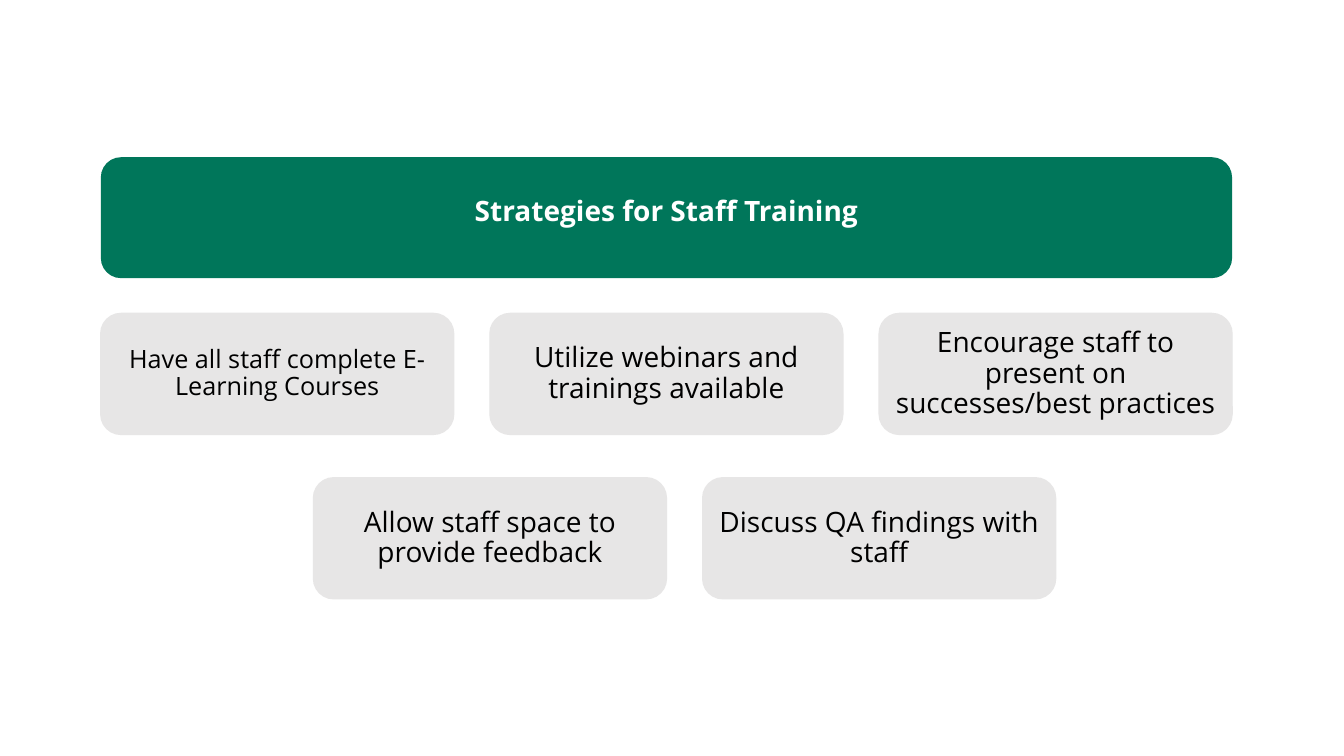
from dataclasses import dataclass

from pptx import Presentation
from pptx.dml.color import RGBColor
from pptx.enum.shapes import MSO_SHAPE
from pptx.enum.text import MSO_ANCHOR, MSO_AUTO_SIZE, PP_ALIGN
from pptx.util import Inches, Pt

ROUNDED = MSO_SHAPE.ROUNDED_RECTANGLE
MIDDLE = MSO_ANCHOR.MIDDLE
CENTER = PP_ALIGN.CENTER
GROW = MSO_AUTO_SIZE.SHAPE_TO_FIT_TEXT


@dataclass(frozen=True)
class Theme:
    font: str = "Open Sans"
    green: RGBColor = RGBColor(0x00, 0x76, 0x5A)
    gray: RGBColor = RGBColor(0xE7, 0xE6, 0xE6)
    black: RGBColor = RGBColor(0, 0, 0)
    white: RGBColor = RGBColor(0xFF, 0xFF, 0xFF)
    text_size: int = 20
    small_size: int = 18
    line_spacing: float = 0.9


class SlideBuilder:
    def __init__(self, slide, theme):
        self.slide = slide
        self.theme = theme

    def panel(self, left, top, width, height, color):
        panel = self.slide.shapes.add_shape(
            ROUNDED, Inches(left), Inches(top), Inches(width), Inches(height))
        panel.shadow.inherit = False
        panel.fill.solid()
        panel.fill.fore_color.rgb = color
        panel.line.fill.background()
        return panel

    def set_wording(self, frame, wording, size, color, bold=False):
        frame.word_wrap = True
        frame.text = wording
        paragraph = frame.paragraphs[0]
        paragraph.alignment = CENTER
        paragraph.line_spacing = self.theme.line_spacing
        font = paragraph.runs[0].font
        font.name = self.theme.font
        font.size = Pt(size)
        font.bold = bold
        font.color.rgb = color

    def card(self, left, top, width, height, wording, size):
        card = self.panel(left, top, width, height, self.theme.gray)
        card.line.color.rgb = self.theme.gray
        card.line.width = Pt(1)
        card.text_frame.vertical_anchor = MIDDLE
        self.set_wording(card.text_frame, wording, size, self.theme.black)

    def heading(self, left, top, width, height, wording):
        heading = self.slide.shapes.add_textbox(
            Inches(left), Inches(top), Inches(width), Inches(height))
        self.set_wording(heading.text_frame, wording, self.theme.text_size,
                         self.theme.white, bold=True)
        heading.text_frame.auto_size = GROW


def main():
    theme = Theme()
    deck = Presentation()
    deck.slide_width = Inches(13.33)
    deck.slide_height = Inches(7.5)
    builder = SlideBuilder(deck.slides.add_slide(deck.slide_layouts[6]), theme)

    card_width, card_height, card_step = 3.5, 1.2, 3.86
    strategy_rows = [
        (1, 3.11, [
            ("Have all staff complete E-Learning Courses", theme.small_size),
            ("Utilize webinars and trainings available", theme.text_size),
            ("Encourage staff to present on successes/best practices",
             theme.text_size),
        ]),
        (3.11, 4.74, [
            ("Allow staff space to provide feedback", theme.text_size),
            ("Discuss QA findings with staff", theme.text_size),
        ]),
    ]

    builder.panel(1, 1.56, 11.22, card_height, theme.green)
    for row_left, row_top, strategies in strategy_rows:
        for column, (strategy, size) in enumerate(strategies):
            builder.card(row_left + column * card_step, row_top,
                         card_width, card_height, strategy, size)
    builder.heading(3.8, 1.91, 5.62, 0.44, "Strategies for Staff Training")

    deck.save("out.pptx")


if __name__ == "__main__":
    main()
